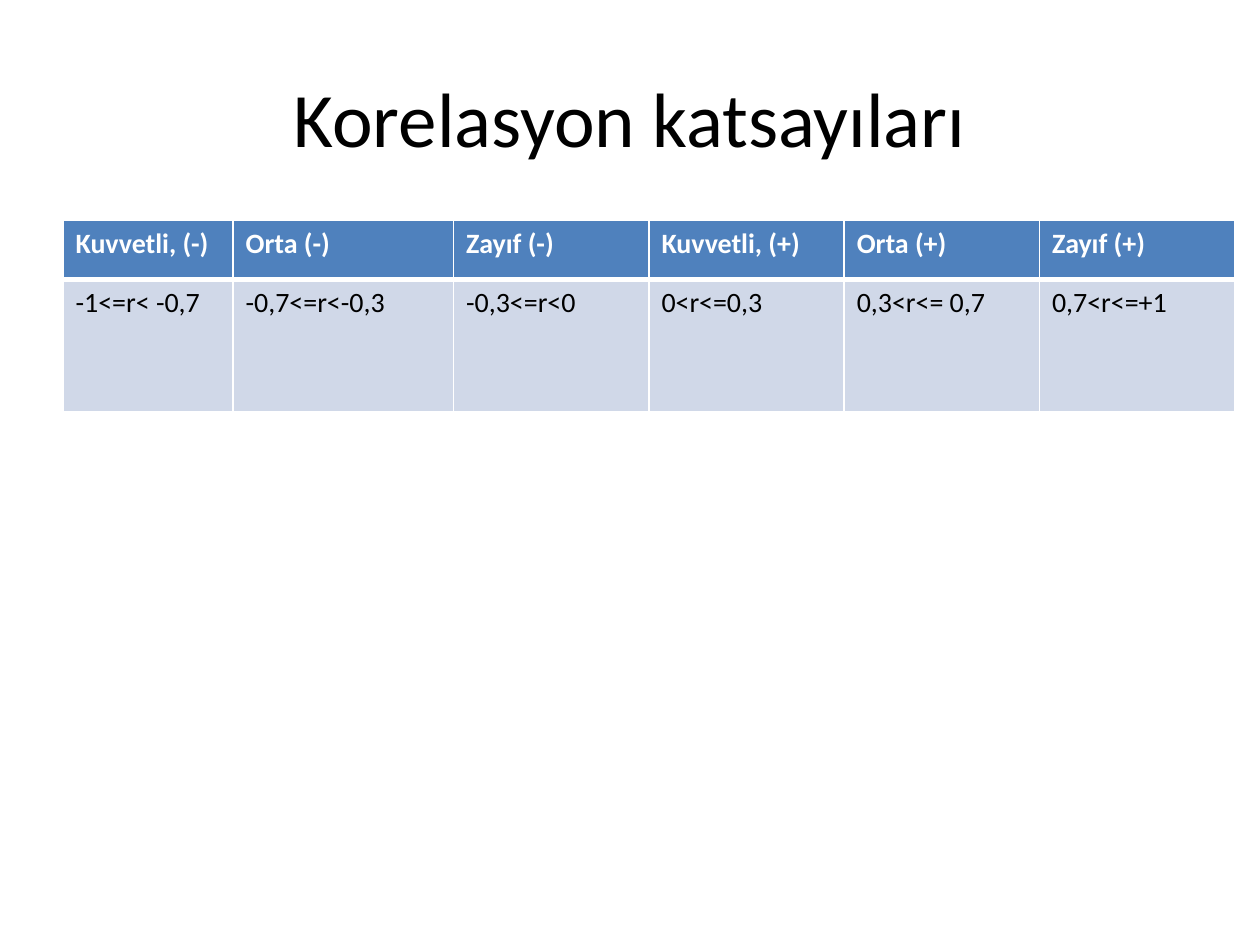
from dataclasses import dataclass

from lxml.etree import SubElement
from pptx import Presentation
from pptx.dml.color import RGBColor as RGB
from pptx.enum.text import MSO_ANCHOR as Anchor, PP_ALIGN as Align
from pptx.oxml.ns import qn
from pptx.util import Pt

COLORS = {"black": "000000", "white": "FFFFFF", "header": "4F81BD", "body": "D0D8E8"}
FONT = "Calibri"
COL_WIDTHS = (97.2, 126, 111.6, 111.6, 111.6, 111.6)
THIN, THICK = 1, 3


@dataclass(frozen=True)
class TableRow:
    height: float
    texts: tuple[str, ...]
    fill: str
    color: str
    bold: bool
    top: float
    bottom: float


ROWS = (
    TableRow(
        33.8,
        ("Kuvvetli, (-)", "Orta (-)", "Zayıf (-)",
         "Kuvvetli, (+)", "Orta (+)", "Zayıf (+)"),
        "header", "white", True, THIN, THICK,
    ),
    TableRow(
        75.6,
        ("-1<=r< -0,7", "-0,7<=r<-0,3", "-0,3<=r<0",
         "0<r<=0,3", "0,3<r<= 0,7", "0,7<r<=+1"),
        "body", "black", False, THICK, THIN,
    ),
)


def write_text(tf, text: str, size: float, color: str, bold: bool = False) -> None:
    r = tf.paragraphs[0].add_run()
    r.text = text
    font_format = {"name": FONT, "size": Pt(size), "bold": bold}
    for name, value in font_format.items():
        setattr(r.font, name, value)
    r.font.color.rgb = RGB.from_string(COLORS[color])


def add_title(s, text: str) -> None:
    sp = s.shapes.add_textbox(Pt(36), Pt(21.6), Pt(648), Pt(90))
    tf = sp.text_frame
    for name, value in {"word_wrap": True, "vertical_anchor": Anchor.MIDDLE}.items():
        setattr(tf, name, value)
    tf.paragraphs[0].alignment = Align.CENTER
    write_text(tf, text, 44, "black")


def set_borders(cell, top: float, bottom: float) -> None:
    """Draw white cell edges; must run before the fill to keep the XML order."""
    tc_pr = cell._tc.get_or_add_tcPr()
    edges = {"lnL": THIN, "lnR": THIN, "lnT": top, "lnB": bottom}
    for tag, width in edges.items():
        ln = SubElement(tc_pr, qn(f"a:{tag}"), w=str(Pt(width)))
        fill = SubElement(ln, qn("a:solidFill"))
        SubElement(fill, qn("a:srgbClr"), val=COLORS["white"])


def add_coefficient_table(s, rows: tuple[TableRow, ...]) -> None:
    height = sum(row.height for row in rows)
    table = s.shapes.add_table(
        len(rows), len(COL_WIDTHS), Pt(36), Pt(126), Pt(sum(COL_WIDTHS)), Pt(height)
    ).table
    for column, width in zip(table.columns, COL_WIDTHS):
        column.width = Pt(width)
    for table_row, row in zip(table.rows, rows):
        table_row.height = Pt(row.height)
        for cell, text in zip(table_row.cells, row.texts):
            set_borders(cell, row.top, row.bottom)
            cell.fill.solid()
            cell.fill.fore_color.rgb = RGB.from_string(COLORS[row.fill])
            write_text(cell.text_frame, text, 16, row.color, row.bold)


def main() -> None:
    prs = Presentation()
    prs.slide_width, prs.slide_height = Pt(720), Pt(540)
    s = prs.slides.add_slide(prs.slide_layouts[6])
    add_title(s, "Korelasyon katsayıları")
    add_coefficient_table(s, ROWS)
    prs.save("out.pptx")


if __name__ == "__main__":
    main()
